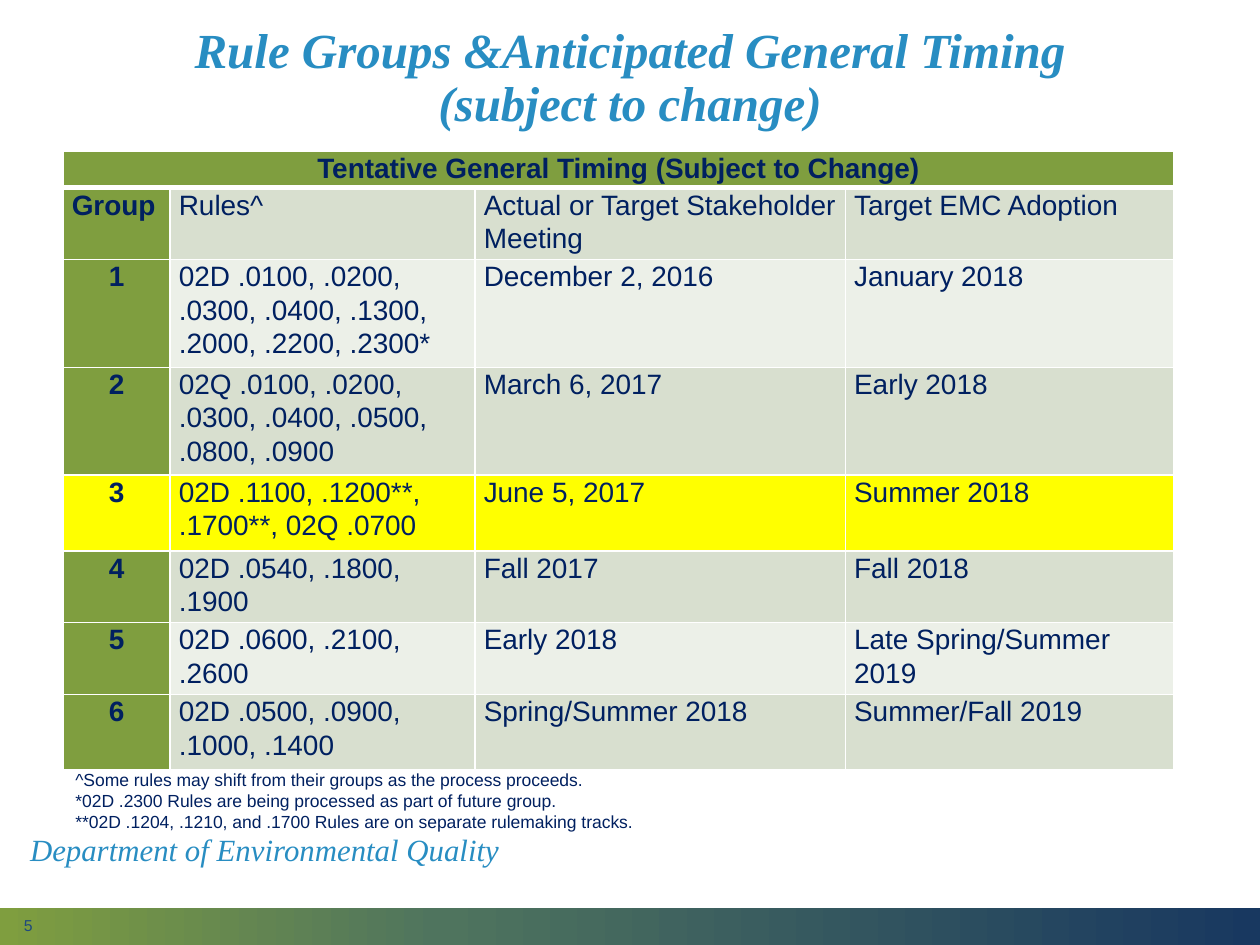
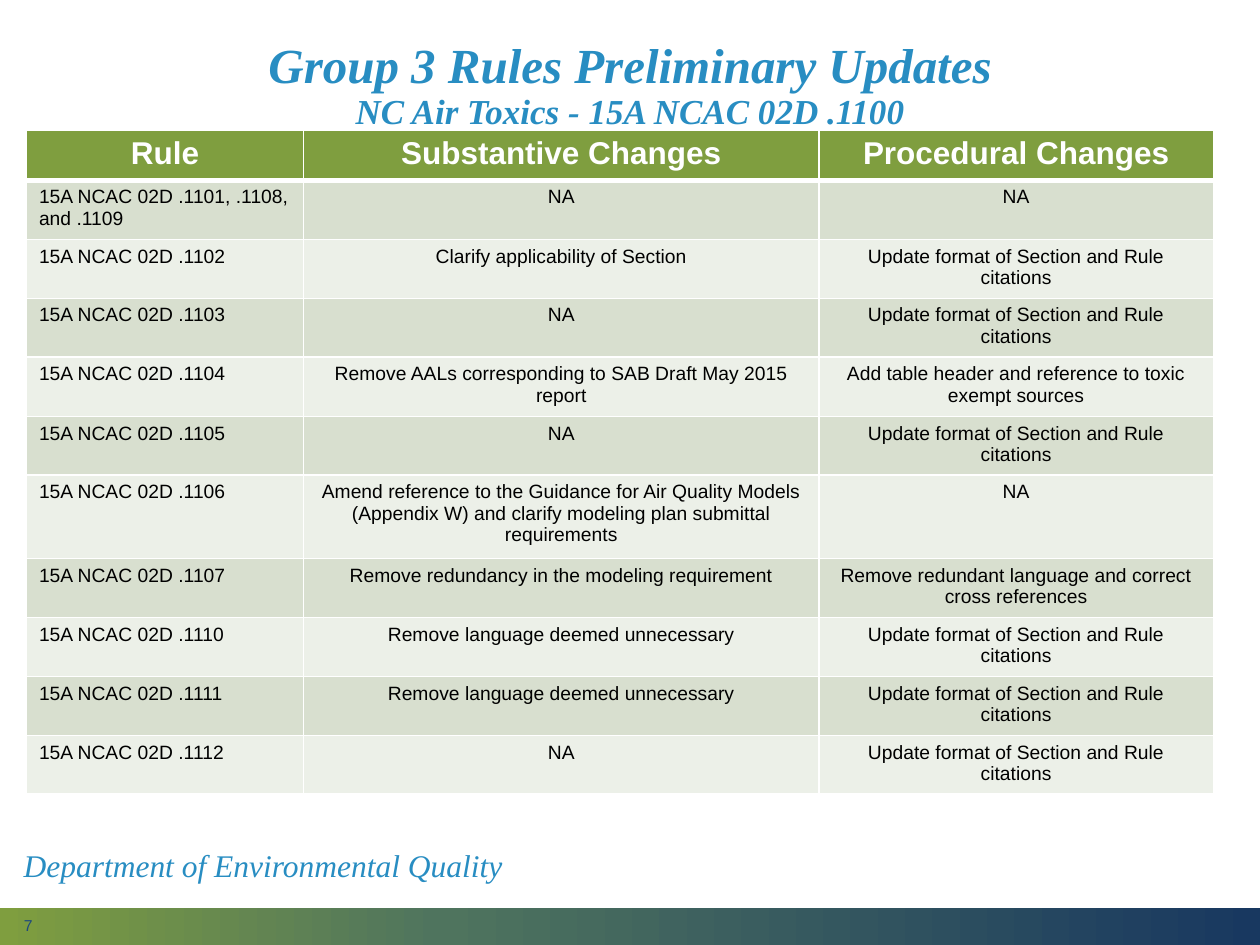
"""Build two slides on the timing and updates of air quality rule groups."""
from copy import deepcopy
from dataclasses import dataclass

from lxml.etree import SubElement as Sub
from pptx import Presentation
from pptx.dml.color import RGBColor as Rgb
from pptx.enum.shapes import MSO_SHAPE as Kind
from pptx.enum.text import MSO_ANCHOR as Anchor, PP_ALIGN as Align
from pptx.oxml.ns import qn
from pptx.util import Inches, Pt

HUES = {
    "green": "7F9E3F", "teal": "4F745E", "deep": "183860", "blue": "288DC2",
    "navy": "002060", "slate": "1F497D", "sage": "D8DFCF", "mist": "ECF0E8",
    "yellow": "FFFF00", "white": "FFFFFF", "black": "000000",
}
SANS, SERIF = "Arial", "Times New Roman"
BAND = [(0, "green"), (0.35, "teal"), (1, "deep")]
DEPT = "Department of Environmental Quality"
CITE = "Update format of Section and Rule citations"
CUT = "Remove language deemed unnecessary"


@dataclass
class Box:
    left: float
    top: float
    width: float
    height: float

    def lengths(self) -> list:
        return [Inches(n) for n in (self.left, self.top, self.width, self.height)]


@dataclass
class Grid:
    box: Box
    cols: list[float]
    rows: list[float]
    data: list[tuple]


@dataclass
class Page:
    number: int
    title: str
    title_top: float
    foot: Box
    foot_size: float
    sub_size: float = 28


TIMING = Grid(
    Box(0.5, 1.2, 8.82, 4.69), [0.85, 2.42, 2.94, 2.61],
    [0.29, 0.46, 0.82, 0.82, 0.6, 0.55, 0.55, 0.6],
    [
        ("Tentative General Timing (Subject to Change)", "", "", ""),
        ("Group", "Rules^", "Actual or Target Stakeholder Meeting", "Target EMC Adoption"),
        ("1", "02D .0100, .0200, .0300, .0400, .1300, .2000, .2200, .2300*",
         "December 2, 2016", "January 2018"),
        ("2", "02Q .0100, .0200, .0300, .0400, .0500, .0800, .0900",
         "March 6, 2017", "Early 2018"),
        ("3", "02D .1100, .1200**, .1700**, 02Q .0700", "June 5, 2017", "Summer 2018"),
        ("4", "02D .0540, .1800, .1900", "Fall 2017", "Fall 2018"),
        ("5", "02D .0600, .2100, .2600", "Early 2018", "Late Spring/Summer 2019"),
        ("6", "02D .0500, .0900, .1000, .1400", "Spring/Summer 2018", "Summer/Fall 2019"),
    ],
)
CHANGES = [
    (".1101, .1108, and .1109", "NA", "NA"),
    (".1102", "Clarify applicability of Section", CITE),
    (".1103", "NA", CITE),
    (".1104", "Remove AALs corresponding to SAB Draft May 2015 report",
     "Add table header and reference to toxic exempt sources"),
    (".1105", "NA", CITE),
    (".1106", "Amend reference to the Guidance for Air Quality Models (Appendix W) "
     "and clarify modeling plan submittal requirements", "NA"),
    (".1107", "Remove redundancy in the modeling requirement",
     "Remove redundant language and correct cross references"),
    (".1110", CUT, CITE),
    (".1111", CUT, CITE),
    (".1112", "NA", CITE),
]
UPDATES = Grid(
    Box(0.21, 1.03, 9.42, 5.15), [2.2, 4.09, 3.13],
    [0.32, 0.47, 0.46, 0.46, 0.47, 0.46, 0.66, 0.47, 0.46, 0.46, 0.46],
    [("Rule", "Substantive Changes", "Procedural Changes")]
    + [(f"15A NCAC 02D {rule}", *rest) for rule, *rest in CHANGES],
)
NOTES = "\n".join([
    "^Some rules may shift from their groups as the process proceeds.",
    "*02D .2300 Rules are being processed as part of future group.",
    "**02D .1204, .1210, and .1700 Rules are on separate rulemaking tracks.",
])


def hue(name: str) -> Rgb:
    """Give the named colour."""
    return Rgb.from_string(HUES[name])


def write(frame, text: str, *, size: float, color: str, font: str = SANS,
          bold: bool = False, italic: bool = False, align=Align.LEFT,
          space: float = 1.0, sub: float | None = None) -> None:
    """Fill a frame; newlines part paragraphs, vertical tabs part lines."""
    for i, part in enumerate(text.split("\n")):
        para = frame.add_paragraph() if i else frame.paragraphs[0]
        para.alignment, para.line_spacing = align, space
        for j, line in enumerate(part.split("\v")):
            if j:
                para.add_line_break()
            run = para.add_run()
            run.text = line
            face = run.font
            face.name, face.size = font, Pt(sub if j and sub else size)
            face.bold, face.italic = bold, italic
            face.color.rgb = hue(color)


def label(slide, box: Box, text: str, anchor=Anchor.MIDDLE, **style) -> None:
    """Add a wrapped text box."""
    frame = slide.shapes.add_textbox(*box.lengths()).text_frame
    frame.word_wrap, frame.vertical_anchor = True, anchor
    write(frame, text, **style)


def band(slide) -> None:
    """Draw the bottom band."""
    bar = slide.shapes.add_shape(Kind.RECTANGLE, *Box(0, 7.21, 10, 0.3).lengths())
    bar.shadow.inherit = False
    bar.line.fill.background()
    bar.fill.gradient()
    bar.fill.gradient_angle = 0
    stops = bar.element.find(".//" + qn("a:gsLst"))
    stops.insert(1, deepcopy(stops[0]))
    for stop, (place, name) in zip(bar.fill.gradient_stops, BAND):
        stop.position, stop.color.rgb = place, hue(name)


def paint(cell, name: str, top: float, low: float) -> None:
    """Give a cell white edges and a fill."""
    props = cell._tc.get_or_add_tcPr()
    for side, width in zip("LRTB", (1, 1, top, low)):
        edge = Sub(props, qn(f"a:ln{side}"), w=str(Pt(width)))
        Sub(Sub(edge, qn("a:solidFill")), qn("a:srgbClr"), val=HUES["white"])
    cell.fill.solid()
    cell.fill.fore_color.rgb = hue(name)


def table(slide, grid: Grid, look, tight: bool = False) -> None:
    """Draw a grid; look gives the fill and text style of each cell."""
    tab = slide.shapes.add_table(
        len(grid.rows), len(grid.cols), *grid.box.lengths()).table
    for col, width in zip(tab.columns, grid.cols):
        col.width = Inches(width)
    for row, height in zip(tab.rows, grid.rows):
        row.height = Inches(height)
    for r, line in enumerate(grid.data):
        for c, text in enumerate(line):
            cell = tab.cell(r, c)
            fill, style = look(r, c)
            if tight:
                cell.margin_left = cell.margin_right = Inches(0.07)
                cell.margin_top = cell.margin_bottom = 0
            paint(cell, fill, 3 if r == 1 else 1, 1 if r else 3)
            if text:
                write(cell.text_frame, text, **style)
    if not grid.data[0][-1]:
        tab.cell(0, 0).merge(tab.cell(0, len(grid.cols) - 1))


def stripe(r: int) -> str:
    """Pick the fill of a body row."""
    return "sage" if r % 2 else "mist"


def timing_look(r: int, c: int) -> tuple[str, dict]:
    """Style the timing table."""
    head = r == 0 or c == 0
    fill = "yellow" if r == 4 else "green" if head else stripe(r)
    mid = head and r != 1
    return fill, dict(size=16, color="navy", bold=head, space=1.07,
                      align=Align.CENTER if mid else Align.LEFT)


def update_look(r: int, c: int) -> tuple[str, dict]:
    """Style the updates table."""
    align = Align.LEFT if r and c == 0 else Align.CENTER
    if r == 0:
        return "green", dict(size=18, color="white", bold=True, align=align)
    return stripe(r), dict(size=11, color="black", align=align)


def start(deck, page: Page):
    """Add a slide with its band, title, footer and number."""
    slide = deck.slides.add_slide(deck.slide_layouts[6])
    band(slide)
    label(slide, Box(0.69, page.title_top, 8.62, 1.16), page.title, size=28,
          sub=page.sub_size, color="blue", font=SERIF, bold=True, italic=True,
          align=Align.CENTER, space=0.9)
    label(slide, Box(0.09, 7.27, 2.25, 0.15), str(page.number), size=9, color="slate")
    label(slide, page.foot, DEPT, size=page.foot_size, color="blue", font=SERIF,
          italic=True, space=0.9)
    return slide


def main() -> None:
    """Build and save the deck."""
    deck = Presentation()
    deck.slide_width, deck.slide_height = Inches(10), Inches(7.5)

    slide = start(deck, Page(
        5, "Rule Groups &Anticipated General Timing\v(subject to change)", 0.05,
        Box(0.14, 6.56, 4.1, 0.4), 17.6))
    table(slide, TIMING, timing_look, tight=True)
    label(slide, Box(0.5, 6.05, 8.04, 0.61), NOTES, Anchor.TOP, size=10, color="navy")

    slide = start(deck, Page(
        7, "Group 3 Rules Preliminary Updates\vNC Air Toxics - 15A NCAC 02D .1100", 0.11,
        Box(0.09, 6.7, 4.04, 0.37), 18, sub_size=20))
    table(slide, UPDATES, update_look)
    deck.save("out.pptx")


if __name__ == "__main__":
    main()
